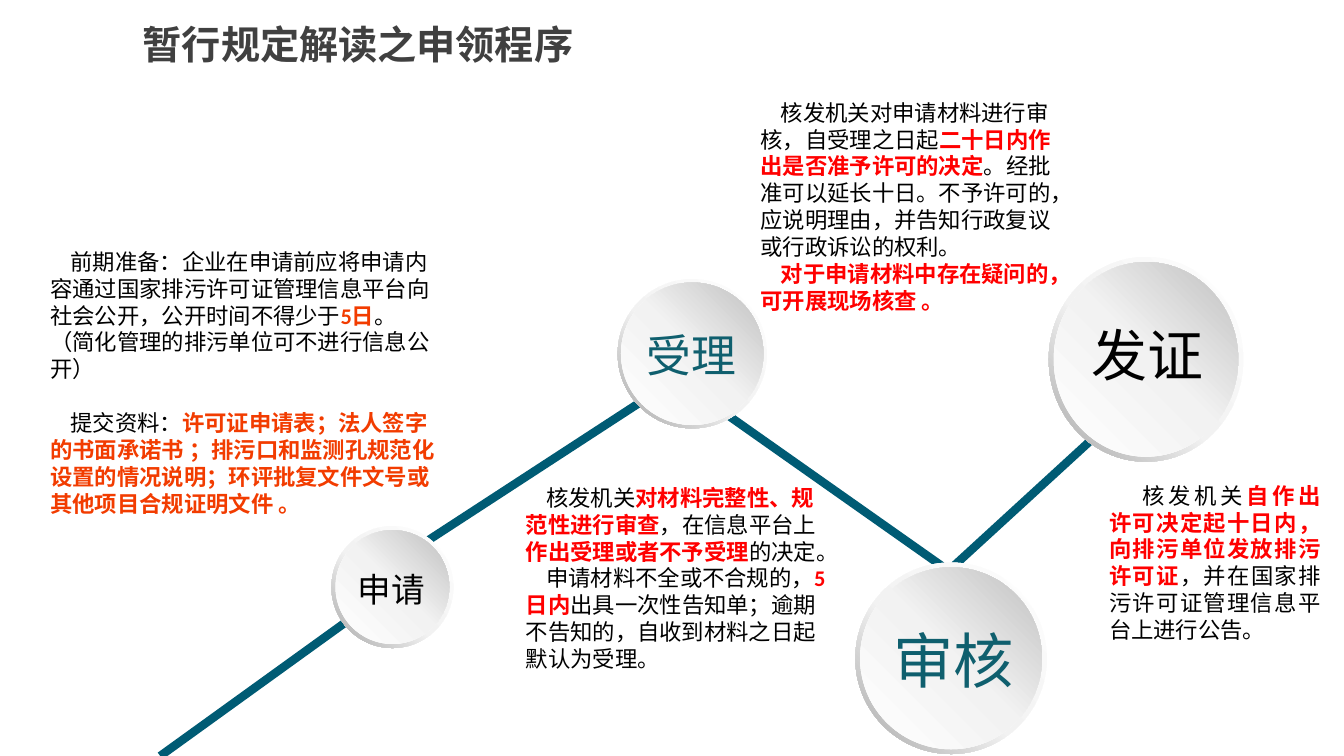
"""Build the permit application procedure slide: four stage discs joined by lines, with notes."""
from copy import deepcopy
from typing import NamedTuple

from lxml import etree
from pptx import Presentation
from pptx import util as u
from pptx.dml.color import RGBColor
from pptx.enum import shapes, text
from pptx.oxml.ns import qn

COLORS = {
    "line": "005B74", "teal": "0F5F6E", "black": "000000", "title": "404040",
    "orange": "F23C00", "red": "FF0000",
    "white": "FFFFFF", "pale": "F2F2F2", "silver": "BFBFBF", "gray": "A6A6A6",
}
BODY_FONT = "Calibri"
LABEL_FONT = "TeX Gyre Adventor"
TITLE_FONT = "Noto Sans CJK SC"
INDENT = 14.5
LINE_HEIGHT = 19.4
LEFT, CENTER, JUSTIFY = text.PP_ALIGN.LEFT, text.PP_ALIGN.CENTER, text.PP_ALIGN.JUSTIFY


class Area(NamedTuple):
    left: float
    top: float
    width: float
    height: float


class Span(NamedTuple):
    words: str
    color: str = "black"
    bold: bool = False
    size: float = 16
    font: str = BODY_FONT


class Para(NamedTuple):
    spans: list[Span]
    align: text.PP_ALIGN = LEFT
    indent: float = 0
    before: float = 0


class Note(NamedTuple):
    area: Area
    paras: list[Para]
    inset_x: float = 9.36
    inset_y: float = 5.04
    wrap: bool = True


class Stage(NamedTuple):
    ring: Area
    rim: float
    label: Area
    name: Span


class Link(NamedTuple):
    x1: float
    y1: float
    x2: float
    y2: float


class Shade(NamedTuple):
    middle: float
    end: str
    angle: float


RING_SHADE = Shade(0.55, "gray", 225)
DISC_SHADE = Shade(0.51, "silver", 45)

LINKS = [
    Link(299.5, 390.2, 466.6, 281.5),
    Link(114.5, 540, 256.3, 437.8),
    Link(494.6, 278.6, 681.8, 410.4),
    Link(680.4, 405.4, 860.4, 240.5),
]

STAGES = [
    Stage(Area(236.9, 375.8, 87.1, 87.1), 2.9, Area(248.4, 402.5, 63.4, 36),
          Span("申请", size=24)),
    Stage(Area(441.4, 199.4, 106.6, 106.6), 2.4, Area(455, 230.4, 79.2, 46.1),
          Span("受理", "teal", size=32, font=LABEL_FONT)),
    Stage(Area(611.3, 401.8, 136.8, 136.8), 3.4, Area(631.4, 441.4, 100.8, 59),
          Span("审核", "teal", size=43, font=LABEL_FONT)),
    Stage(Area(749.5, 183.6, 139, 146.2), 3.6, Area(773.3, 225.4, 95, 55.4),
          Span("发证", size=40)),
]

NOTES = [
    Note(Area(26.6, 172.1, 294.5, 223.2), [
        Para([Span("前期准备：企业在申请前应将申请内容通过国家排污许可证管理信息平台向社会公开，公开时间不得少于"),
              Span("5日", "orange", True),
              Span("。（简化管理的排污单位可不进行信息公开）")], indent=INDENT),
        Para([Span("提交资料："),
              Span("许可证申请表；法人签字的书面承诺书 ；排污口和监测孔规范化设置的情况说明；"
                   "环评批复文件文号或其他项目合规证明文件 。", "orange", True)],
             indent=INDENT, before=LINE_HEIGHT),
    ]),
    Note(Area(366.5, 340.6, 234.7, 145.4), [
        Para([Span("核发机关"), Span("对材料完整性、规范性进行审查", "red", True),
              Span("，在信息平台上"), Span("作出受理或者不予受理", "red", True),
              Span("的决定。")], indent=INDENT),
        Para([Span("申请材料不全或不合规的，"), Span("5日内", "red", True),
              Span("出具一次性告知单；逾期不告知的，自收到材料之日起默认为受理。")], indent=INDENT),
    ]),
    Note(Area(534.2, 65.5, 234, 164.9), [
        Para([Span("核发机关对申请材料进行审核，自受理之日起"),
              Span("二十日内作出是否准予许可的决定", "red", True),
              Span("。经批准可以延长十日。不予许可的，应说明理由，并告知行政复议或行政诉讼的权利。")],
             indent=INDENT),
        Para([Span("对于申请材料中存在疑问的，可开展现场核查 。", "red", True)], indent=INDENT),
    ]),
    Note(Area(785.5, 340.6, 165.6, 123.8), [
        Para([Span("核发机关"),
              Span("自作出许可决定起十日内，向排污单位发放排污许可证", "red", True),
              Span("，并在国家排污许可证管理信息平台上进行公告。")], JUSTIFY, 24),
    ], 7.2, 3.6),
    Note(Area(8.6, 10.8, 494.6, 41), [
        Para([Span("暂行规定解读之申领程序", "title", True, 28, TITLE_FONT)], CENTER),
    ], 7.2, 3.6),
]


def rgb(name: str) -> RGBColor:
    return RGBColor.from_string(COLORS[name])


def points(lengths) -> list[u.Length]:
    return [u.Pt(length) for length in lengths]


def assign(target, values: dict) -> None:
    for name, value in values.items():
        setattr(target, name, value)


def add_link(page, link: Link) -> None:
    line = page.shapes.add_connector(shapes.MSO_CONNECTOR.STRAIGHT, *points(link))
    line.line.color.rgb = rgb("line")
    line.line.width = u.Pt(6)
    etree.SubElement(line._element.spPr, qn("a:effectLst"))


def add_note(parent, note: Note) -> None:
    box = parent.shapes.add_textbox(*points(note.area))
    frame = box.text_frame
    assign(frame, {
        "word_wrap": note.wrap, "auto_size": text.MSO_AUTO_SIZE.SHAPE_TO_FIT_TEXT,
        "margin_left": u.Pt(note.inset_x), "margin_right": u.Pt(note.inset_x),
        "margin_top": u.Pt(note.inset_y), "margin_bottom": u.Pt(note.inset_y),
    })
    for index, para in enumerate(note.paras):
        paragraph = frame.add_paragraph() if index else frame.paragraphs[0]
        paragraph.alignment = para.align
        if para.before:
            paragraph.space_before = u.Pt(para.before)
        if para.indent:
            paragraph._p.get_or_add_pPr().set("indent", str(int(u.Pt(para.indent))))
        for span in para.spans:
            run = paragraph.add_run()
            run.text = span.words
            assign(run.font, {"name": span.font, "size": u.Pt(span.size), "bold": span.bold})
            run.font.color.rgb = rgb(span.color)
            etree.SubElement(run._r.rPr, qn("a:ea"), typeface=BODY_FONT)


def add_round(parent, kind: shapes.MSO_SHAPE, area: Area, shade: Shade):
    shape = parent.shapes.add_shape(kind, *points(area))
    shape.shadow.inherit = False
    shape.line.fill.background()
    shape.fill.gradient()
    shape.fill.gradient_angle = shade.angle
    stops = shape._element.spPr.find(".//" + qn("a:gsLst"))
    stops.append(deepcopy(stops[0]))
    tones = [(0, "white"), (shade.middle, "pale"), (1, shade.end)]
    for stop, (position, color) in zip(shape.fill.gradient_stops, tones):
        stop.position = position
        stop.color.rgb = rgb(color)
    return shape


def add_stage(page, stage: Stage) -> None:
    group = page.shapes.add_group_shape()
    ring = add_round(group, shapes.MSO_SHAPE.DONUT, stage.ring, RING_SHADE)
    ring.adjustments[0] = 0.05
    left, top, width, height = stage.ring
    disc = Area(left + stage.rim, top + stage.rim, width - 2 * stage.rim, height - 2 * stage.rim)
    add_round(group, shapes.MSO_SHAPE.OVAL, disc, DISC_SHADE)
    add_note(group, Note(stage.label, [Para([stage.name])], 7.2, 3.6, False))


def main() -> None:
    deck = Presentation()
    assign(deck, {"slide_width": u.Pt(960.48), "slide_height": u.Pt(540)})
    page = deck.slides.add_slide(deck.slide_layouts[6])
    for link in LINKS:
        add_link(page, link)
    for stage in STAGES:
        add_stage(page, stage)
    for note in NOTES:
        add_note(page, note)
    deck.save("out.pptx")


if __name__ == "__main__":
    main()
